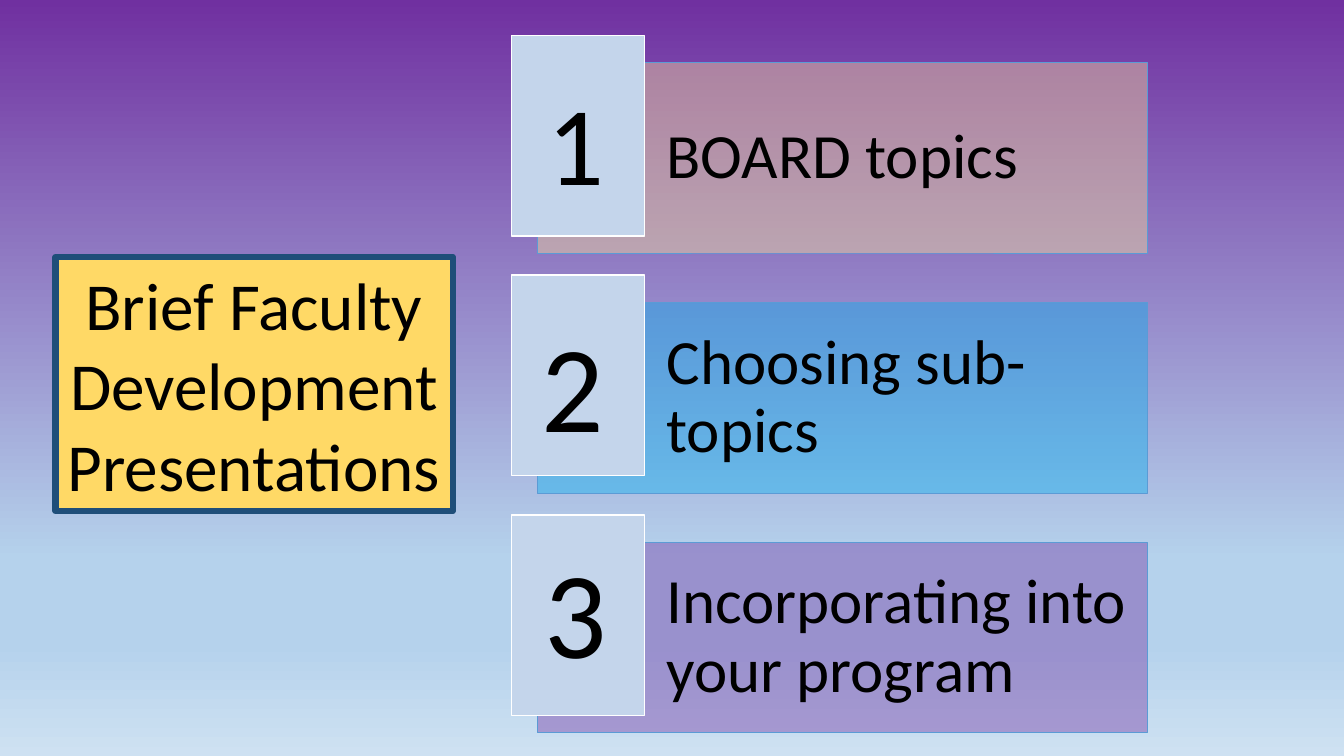
import copy
from dataclasses import dataclass

import pptx
import pptx.dml.color
import pptx.enum.shapes
import pptx.enum.text
import pptx.oxml
import pptx.oxml.ns
import pptx.util

Inches = pptx.util.Inches
Pt = pptx.util.Pt
Anchor = pptx.enum.text.MSO_ANCHOR
Align = pptx.enum.text.PP_ALIGN


@dataclass(frozen=True)
class Theme:
    font: str = "Calibri"
    text: str = "000000"
    title_fill: str = "FFD966"
    title_line: str = "1F4E79"
    panel_line: str = "5B9BD5"
    tile_fill: str = "C4D5EB"
    tile_line: str = "FFFFFF"
    title_size: int = 48
    topic_size: int = 45
    background: tuple = ((0, "7030A0"), (0.74, "B5D2EC"), (0.85, "B5D2EC"), (1, "CEE1F2"))


THEME = Theme()
TITLE_LINES = ("Brief Faculty", "Development", "Presentations")
TOPICS = (
    ("BOARD topics", "FFE699", 80, (0.26, 0.33, 0.77, 1.45)),
    ("Choosing sub-topics", "00B0F0", 88, (0.2, 0.29, 0.83, 1.58)),
    ("Incorporating into your program", "7030A0", 88, (0.23, 0.15, 0.83, 1.58)),
)


def rgb(value):
    return pptx.dml.color.RGBColor.from_string(value)


def paint(shape, fill, line, width):
    shape.fill.solid()
    shape.fill.fore_color.rgb = rgb(fill)
    shape.line.color.rgb = rgb(line)
    shape.line.width = Pt(width)


def add_rectangle(slide, box, fill, line, width):
    rectangle = pptx.enum.shapes.MSO_SHAPE.RECTANGLE
    shape = slide.shapes.add_shape(rectangle, *map(Inches, box))
    shape.shadow.inherit = False
    paint(shape, fill, line, width)
    return shape


def add_run(paragraph, text, size):
    run = paragraph.add_run()
    run.text = text
    run.font.name = THEME.font
    run.font.size = Pt(size)
    run.font.color.rgb = rgb(THEME.text)


def set_opacity(shape, percent):
    color = shape.element.spPr.find(pptx.oxml.ns.qn("a:solidFill"))[0]
    alpha = pptx.oxml.parse_xml(f'<a:alpha {pptx.oxml.ns.nsdecls("a")} val="{percent * 1000}"/>')
    color.append(alpha)


def set_background(slide):
    fill = slide.background.fill
    fill.gradient()
    fill.gradient_angle = 270
    stop_list = slide.element.find(".//" + pptx.oxml.ns.qn("a:gsLst"))
    while len(stop_list) < len(THEME.background):
        stop_list.append(copy.deepcopy(stop_list[0]))
    for stop, (position, color) in zip(fill.gradient_stops, THEME.background):
        stop.position = position
        stop.color.rgb = rgb(color)


def place_title(slide, box):
    title = slide.shapes.title
    title.left, title.top, title.width, title.height = map(Inches, box)
    paint(title, THEME.title_fill, THEME.title_line, 4.5)
    frame = title.text_frame
    frame.word_wrap = False
    frame.auto_size = pptx.enum.text.MSO_AUTO_SIZE.NONE
    frame.vertical_anchor = Anchor.MIDDLE
    for index, line in enumerate(TITLE_LINES):
        paragraph = frame.add_paragraph() if index else frame.paragraphs[0]
        paragraph.alignment = Align.CENTER
        paragraph.line_spacing = 1.0
        paragraph.space_before = Pt(0)
        add_run(paragraph, line, THEME.title_size)


def add_topic(slide, box, number, text, color, number_size, number_box):
    left, top, width, height = box
    panel_box = (left + 0.26, top + 0.27, width - 0.26, height - 0.27)
    panel = add_rectangle(slide, panel_box, color, THEME.panel_line, 0.5)
    set_opacity(panel, 40)
    frame = panel.text_frame
    frame.word_wrap = True
    frame.vertical_anchor = Anchor.MIDDLE
    frame.margin_left = Inches(1.28)
    frame.margin_top = frame.margin_right = frame.margin_bottom = Inches(0.19)
    paragraph = frame.paragraphs[0]
    paragraph.alignment = Align.LEFT
    paragraph.line_spacing = 0.9
    add_run(paragraph, text, THEME.topic_size)

    add_rectangle(slide, (left, top, 1.32, 1.99), THEME.tile_fill, THEME.tile_line, 1)
    x, y, number_width, number_height = number_box
    label = slide.shapes.add_textbox(
        *map(Inches, (left + x, top + y, number_width, number_height))
    )
    label.text_frame.word_wrap = False
    add_run(label.text_frame.paragraphs[0], str(number), number_size)


def add_topics(slide, box):
    left, top, width, height = box
    pitch = 2.38
    row_height = height - pitch * (len(TOPICS) - 1)
    for index, topic in enumerate(TOPICS):
        row = (left, top + index * pitch, width, row_height)
        add_topic(slide, row, index + 1, *topic)


def main():
    presentation = pptx.Presentation()
    presentation.slide_width = Inches(13.33)
    presentation.slide_height = Inches(7.5)
    slide = presentation.slides.add_slide(presentation.slide_layouts.get_by_name("Title Only"))
    set_background(slide)
    place_title(slide, (0.55, 2.55, 3.94, 2.52))
    add_topics(slide, (5.07, 0.35, 6.31, 6.92))
    presentation.save("out.pptx")


if __name__ == "__main__":
    main()
